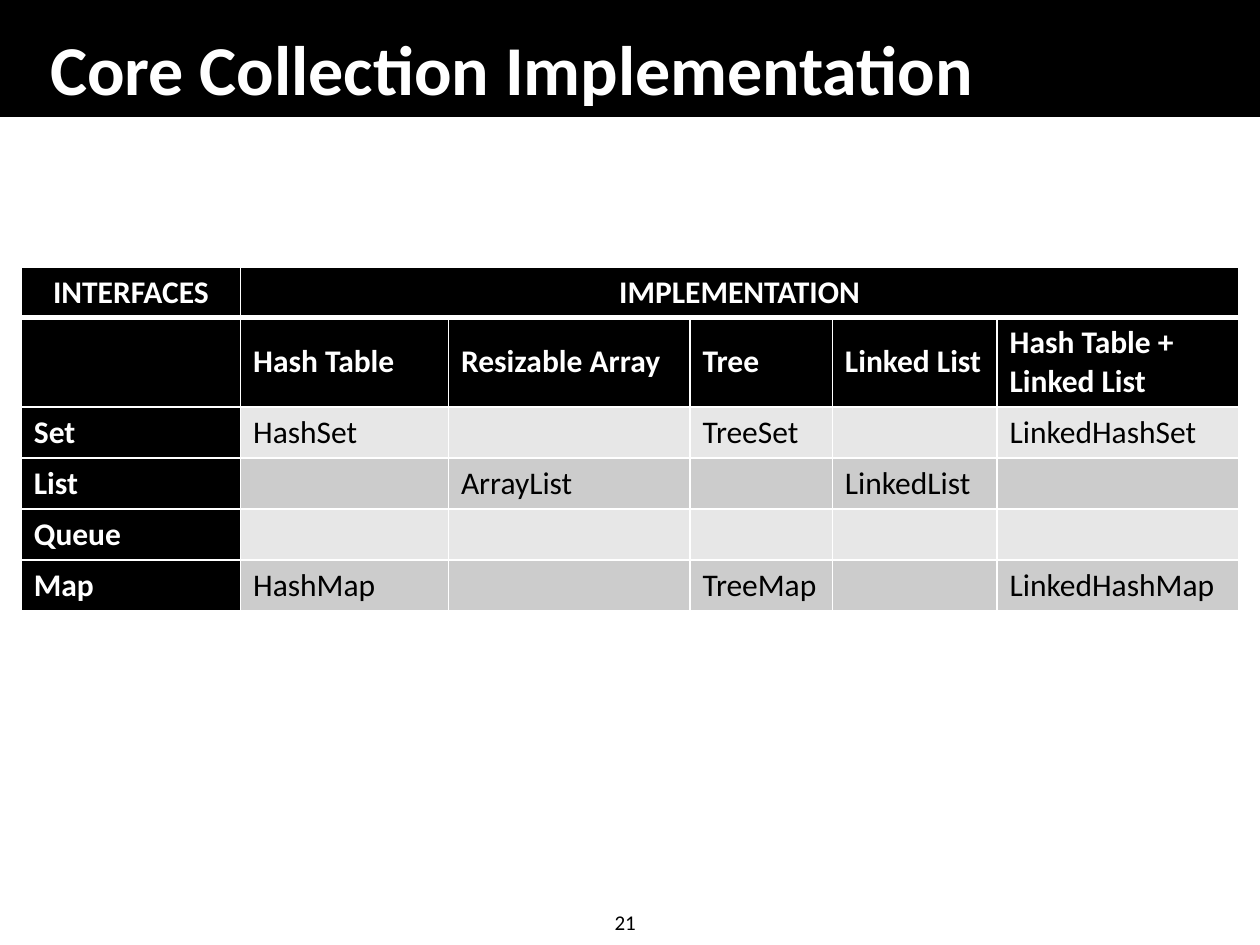
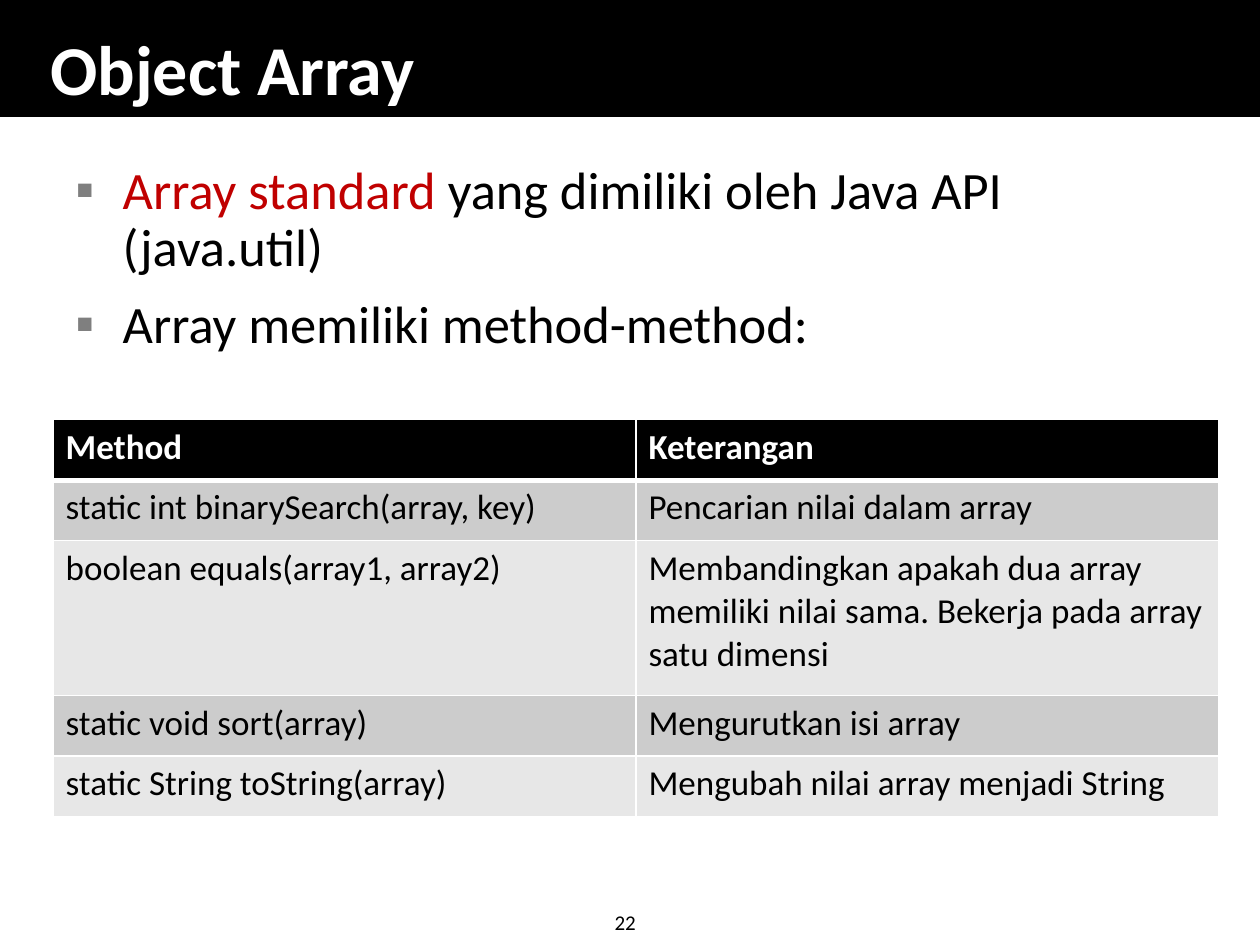
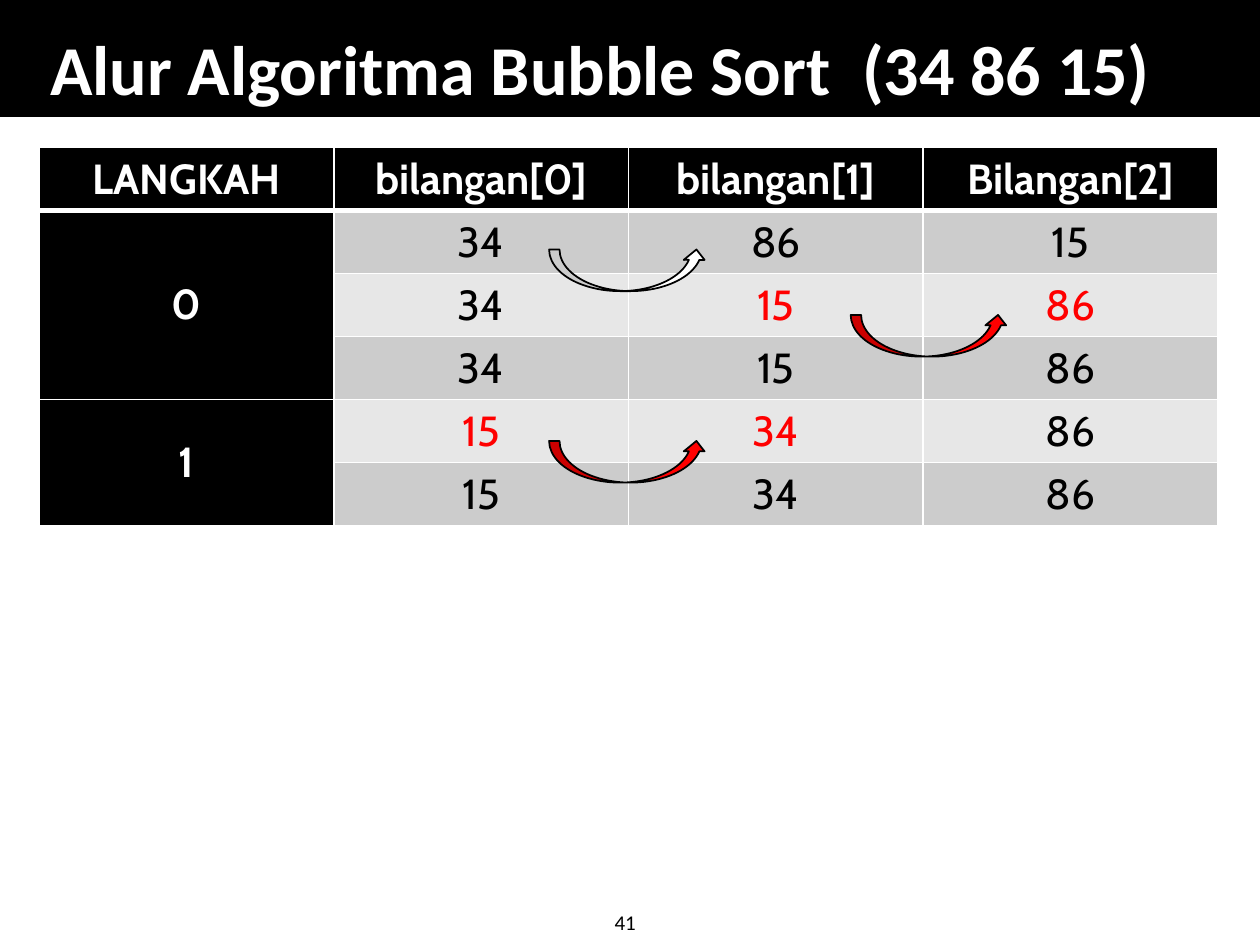
from dataclasses import dataclass
from typing import Any

from lxml import etree
from pptx import Presentation
from pptx.dml.color import RGBColor
from pptx.enum.shapes import MSO_SHAPE
from pptx.enum.text import MSO_ANCHOR, MSO_AUTO_SIZE, PP_ALIGN
from pptx.oxml.ns import qn
from pptx.util import Cm, Pt

BLACK = RGBColor(0x00, 0x00, 0x00)
WHITE = RGBColor(0xFF, 0xFF, 0xFF)
RED = RGBColor(0xFF, 0x00, 0x00)
DARK_RED = RGBColor(0xC0, 0x00, 0x00)
GRAY = RGBColor(0x7F, 0x7F, 0x7F)
BAND_LIGHT = RGBColor(0xE7, 0xE7, 0xE7)
BAND_DARK = RGBColor(0xCC, 0xCC, 0xCC)

RECTANGLE = MSO_SHAPE.RECTANGLE
CURVED_ARROW = MSO_SHAPE.CURVED_UP_ARROW
LEFT, CENTER = PP_ALIGN.LEFT, PP_ALIGN.CENTER
TOP, MIDDLE, BOTTOM = MSO_ANCHOR.TOP, MSO_ANCHOR.MIDDLE, MSO_ANCHOR.BOTTOM
NO_AUTOFIT = MSO_AUTO_SIZE.NONE

CALIBRI, CABIN = "Calibri", "Cabin"
LAYOUT_CONTENT, LAYOUT_TITLE_ONLY = 1, 5

TITLE_FONT = {"name": CALIBRI, "size": Pt(40), "bold": True}
BODY_FONT = {"name": CALIBRI, "size": Pt(30)}
NUMBER_FONT = {"name": CALIBRI, "size": Pt(12)}
TITLE_BOX = {"left": Cm(0.76), "top": Cm(0.53), "width": Cm(23.77), "height": Cm(1.8)}
BODY_BOX = {"left": Cm(1.27), "top": Cm(3.18), "width": Cm(22.86), "height": Cm(13.94)}
BULLET_INDENT = Cm(0.95)


@dataclass(frozen=True)
class TableSpec:
    """Contents and look of one table, with lengths in centimetres."""

    left: float
    top: float
    widths: list[float]
    heights: list[float]
    rows: list[list[str]]
    font: str
    size: int
    anchor: Any
    head_align: Any
    body_align: Any
    head_rows: int = 1
    head_column: bool = False
    merges: tuple[tuple[int, int, int, int], ...] = ()
    red_cells: tuple[tuple[int, int], ...] = ()


@dataclass(frozen=True)
class SwapArrow:
    """A curved arrow between two numbers, with its corner in centimetres."""

    left: float
    top: float
    color: RGBColor


@dataclass(frozen=True)
class TextPart:
    """A coloured piece of a paragraph."""

    text: str
    color: RGBColor = BLACK


COLLECTIONS = TableSpec(
    left=0.43, top=5.38,
    widths=[4.42, 4.19, 4.87, 2.87, 3.32, 4.87],
    heights=[1.02, 1.8] + [1.03] * 4,
    rows=[
        ["INTERFACES", "IMPLEMENTATION", "", "", "", ""],
        ["", "Hash Table", "Resizable Array", "Tree", "Linked List", "Hash Table + Linked List"],
        ["Set", "HashSet", "", "TreeSet", "", "LinkedHashSet"],
        ["List", "", "ArrayList", "", "LinkedList", ""],
        ["Queue", "", "", "", "", ""],
        ["Map", "HashMap", "", "TreeMap", "", "LinkedHashMap"],
    ],
    font=CALIBRI, size=18, anchor=MIDDLE, head_align=CENTER, body_align=LEFT,
    head_rows=2, head_column=True, merges=((0, 1, 0, 5),),
)

METHODS = TableSpec(
    left=1.07, top=8.46,
    widths=[11.75] * 2,
    heights=[1.22, 1.22, 3.12, 1.22, 1.22],
    rows=[
        ["Method", "Keterangan"],
        ["static int binarySearch(array, key)", "Pencarian nilai dalam array"],
        ["boolean equals(array1, array2)",
         "Membandingkan apakah dua array memiliki nilai sama. "
         "Bekerja pada array satu dimensi"],
        ["static void sort(array)", "Mengurutkan isi array"],
        ["static String toString(array)", "Mengubah nilai array menjadi String"],
    ],
    font=CALIBRI, size=20, anchor=TOP, head_align=LEFT, body_align=LEFT,
)

SORT_STEPS = TableSpec(
    left=0.79, top=2.97,
    widths=[5.94] * 4,
    heights=[1.27] * 6,
    rows=[
        ["LANGKAH", "bilangan[0]", "bilangan[1]", "Bilangan[2]"],
        ["0", "34", "86", "15"],
        ["", "34", "15", "86"],
        ["", "34", "15", "86"],
        ["1", "15", "34", "86"],
        ["", "15", "34", "86"],
    ],
    font=CABIN, size=24, anchor=MIDDLE, head_align=CENTER, body_align=CENTER,
    head_column=True, merges=((1, 0, 3, 0), (4, 0, 5, 0)),
    red_cells=((2, 2), (2, 3), (4, 1), (4, 2)),
)

SWAPS = [
    SwapArrow(11.07, 5.03, WHITE),
    SwapArrow(17.15, 6.35, RED),
    SwapArrow(11.07, 8.89, RED),
]

ARRAY_POINTS = [
    [TextPart("Array standard ", DARK_RED),
     TextPart("yang dimiliki oleh Java API (java.util)")],
    [TextPart("Array memiliki method-method:")],
]


def set_values(target: Any, values: dict[str, Any]) -> None:
    """Set each named attribute of the target."""
    for name, value in values.items():
        setattr(target, name, value)


def add_run(p: Any, text: str, font: dict[str, Any], color: RGBColor) -> None:
    """Add a formatted run to a paragraph."""
    r = p.add_run()
    r.text = text
    set_values(r.font, font)
    r.font.color.rgb = color


def add_preset(slide: Any, kind: Any, box: tuple[float, ...], color: RGBColor) -> Any:
    """Add a filled preset shape with a thin black outline."""
    s = slide.shapes.add_shape(kind, *map(Cm, box))
    s.shadow.inherit = False
    s.fill.solid()
    s.fill.fore_color.rgb = color
    s.line.color.rgb = BLACK
    s.line.width = Pt(1)
    return s


def add_master_band(prs: Any, slide: Any) -> None:
    """Put the black title band on the slide master, behind everything."""
    band = add_preset(slide, RECTANGLE, (0, 0, 25.4, 2.34), BLACK)
    prs.slide_master.shapes.element.insert(2, band.element)


def add_slide(prs: Any, layout: int, title: str, number: int) -> Any:
    """Add a slide with its title and page number."""
    slide = prs.slides.add_slide(prs.slide_layouts[layout])
    s = slide.shapes.title
    set_values(s, TITLE_BOX)
    tf = s.text_frame
    set_values(tf, {"vertical_anchor": BOTTOM, "auto_size": NO_AUTOFIT, "word_wrap": True})
    p = tf.paragraphs[0]
    p.alignment = LEFT
    add_run(p, title, TITLE_FONT, WHITE)
    box = slide.shapes.add_textbox(Cm(12.14), Cm(18.21), Cm(1.04), Cm(0.76))
    box.text_frame.word_wrap = False
    add_run(box.text_frame.paragraphs[0], str(number), NUMBER_FONT, BLACK)
    return slide


def add_bullet(p: Any) -> None:
    """Give a paragraph a hanging grey square bullet."""
    props = p._p.get_or_add_pPr()
    props.set("marL", str(BULLET_INDENT))
    props.set("indent", str(-BULLET_INDENT))
    color = etree.SubElement(props, qn("a:buClr"))
    etree.SubElement(color, qn("a:srgbClr"), val=str(GRAY))
    etree.SubElement(props, qn("a:buFont"), typeface=CALIBRI)
    etree.SubElement(props, qn("a:buChar"), char="▪")


def fill_body(slide: Any, points: list[list[TextPart]]) -> None:
    """Write the bulleted list into the body placeholder."""
    s = slide.placeholders[1]
    set_values(s, BODY_BOX)
    tf = s.text_frame
    tf.auto_size = NO_AUTOFIT
    for i, parts in enumerate(points):
        p = tf.add_paragraph() if i else tf.paragraphs[0]
        add_bullet(p)
        set_values(p, {"line_spacing": 0.9, "space_before": Pt(9 if i else 0),
                       "space_after": Pt(3)})
        for part in parts:
            add_run(p, part.text, BODY_FONT, part.color)


def add_borders(cell: Any, row: int) -> None:
    """Draw white cell borders, thick under the first row."""
    props = cell._tc.get_or_add_tcPr()
    widths = {"lnL": 1, "lnR": 1, "lnT": 3 if row == 1 else 1, "lnB": 3 if row == 0 else 1}
    for side, width in widths.items():
        line = etree.SubElement(props, qn(f"a:{side}"), w=str(Pt(width)))
        fill = etree.SubElement(line, qn("a:solidFill"))
        etree.SubElement(fill, qn("a:srgbClr"), val=str(WHITE))


def format_cell(cell: Any, spec: TableSpec, row: int, col: int) -> None:
    """Fill one cell with its text, colours and borders."""
    is_head = row < spec.head_rows or (spec.head_column and col == 0)
    add_borders(cell, row)
    cell.fill.solid()
    band = BAND_DARK if row % 2 else BAND_LIGHT
    cell.fill.fore_color.rgb = BLACK if is_head else band
    cell.vertical_anchor = spec.anchor
    p = cell.text_frame.paragraphs[0]
    p.alignment = spec.body_align if row else spec.head_align
    if text := spec.rows[row][col]:
        color = RED if (row, col) in spec.red_cells else BLACK
        font = {"name": spec.font, "size": Pt(spec.size), "bold": is_head}
        add_run(p, text, font, WHITE if is_head else color)


def add_grid(slide: Any, spec: TableSpec) -> None:
    """Add the table that a spec describes."""
    table = slide.shapes.add_table(
        len(spec.heights), len(spec.widths), Cm(spec.left), Cm(spec.top),
        Cm(sum(spec.widths)), Cm(sum(spec.heights)),
    ).table
    for column, width in zip(table.columns, spec.widths):
        column.width = Cm(width)
    for i, height in enumerate(spec.heights):
        table.rows[i].height = Cm(height)
        for j in range(len(spec.widths)):
            format_cell(table.cell(i, j), spec, i, j)
    for top, left, bottom, right in spec.merges:
        table.cell(top, left).merge(table.cell(bottom, right))


def main() -> None:
    """Build the three slides and save them."""
    prs = Presentation()
    prs.slide_width, prs.slide_height = Cm(25.4), Cm(19.05)

    slide = add_slide(prs, LAYOUT_TITLE_ONLY, "Core Collection Implementation", 21)
    add_master_band(prs, slide)
    add_grid(slide, COLLECTIONS)

    slide = add_slide(prs, LAYOUT_CONTENT, "Object Array", 22)
    fill_body(slide, ARRAY_POINTS)
    add_grid(slide, METHODS)

    slide = add_slide(prs, LAYOUT_TITLE_ONLY, "Alur Algoritma Bubble Sort  (34 86 15)", 41)
    add_grid(slide, SORT_STEPS)
    for swap in SWAPS:
        add_preset(slide, CURVED_ARROW, (swap.left, swap.top, 3.18, 0.84), swap.color)

    prs.save("out.pptx")


if __name__ == "__main__":
    main()
